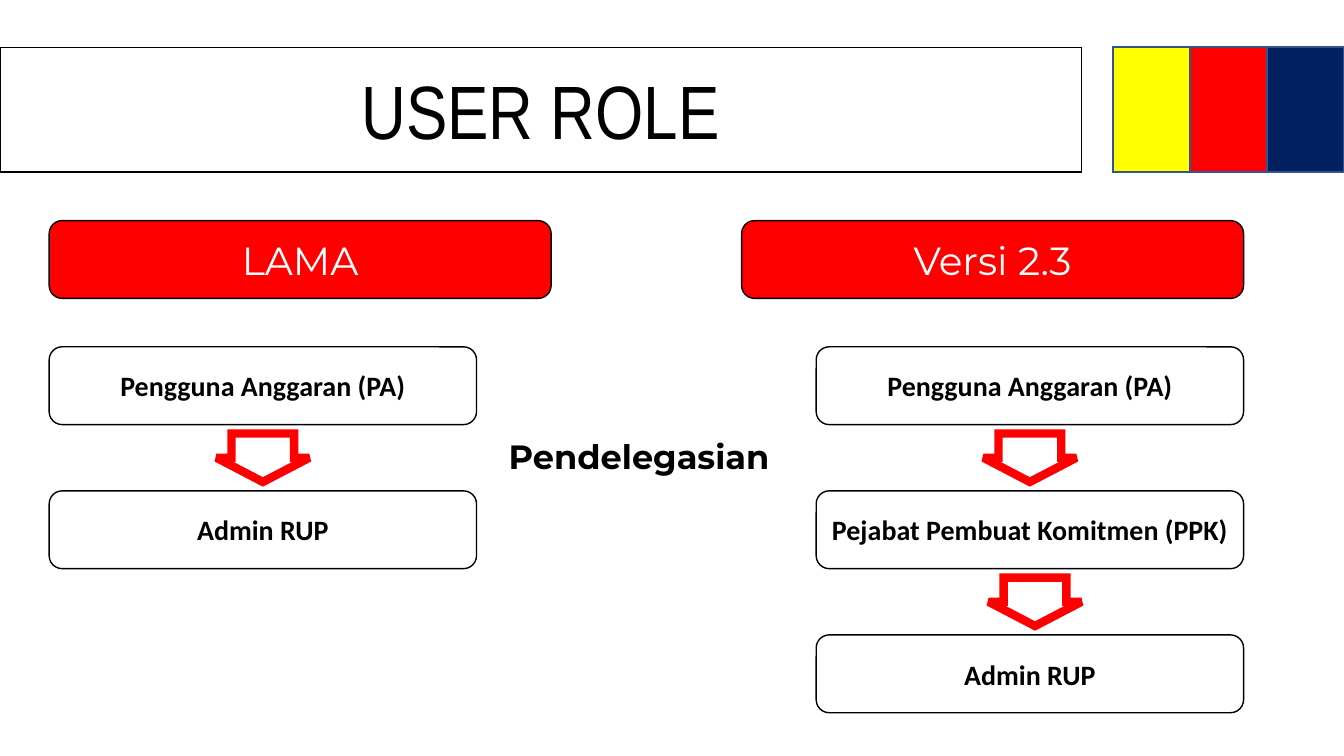
import pptx
import pptx.util
import pptx.dml.color
import pptx.enum.shapes
import pptx.enum.text
import pptx.oxml.ns
from lxml import etree

Cm, Pt = pptx.util.Cm, pptx.util.Pt
KIND = pptx.enum.shapes.MSO_SHAPE
ALIGN = pptx.enum.text.PP_ALIGN
MIDDLE = pptx.enum.text.MSO_ANCHOR.MIDDLE

# Content
TITLE = "USER ROLE"
LABEL = "Pendelegasian"
FLAG = ["FFFF00", "FF0000", "002060"]
# Each flow: heading, roles, sideways shift of each arrow, side of the slide
FLOWS = [
    ("LAMA", ["Pengguna Anggaran (PA)", "Admin RUP"], [0], "left"),
    ("Versi 2.3",
     ["Pengguna Anggaran (PA)", "Pejabat Pembuat Komitmen (PPK)", "Admin RUP"],
     [0, 0.13], "right"),
]

# Layout in centimetres
WIDE, HIGH = 33.87, 19.05
BAND_TOP, BAND_H = 1.19, 3.15
FLAG_W = 1.94
LEFT, RIGHT = 1.24, 31.34
HEAD_TOP, HEAD_W = 5.56, 12.65
ROLE_TOP, ROLE_W, STEP = 8.74, 10.77, 3.63
BOX_H = 1.96
ARROW_W, ARROW_H = 2.34, 1.22


def hue(code):
    return pptx.dml.color.RGBColor.from_string(code)


def place(item, x, y, w, h):
    item.left, item.top, item.width, item.height = Cm(x), Cm(y), Cm(w), Cm(h)


def paint(item, fill, line, weight=1):
    item.fill.solid()
    item.fill.fore_color.rgb = hue(fill)
    item.line.color.rgb = hue(line)
    item.line.width = Pt(weight)
    # Sharp corners on the outline
    miter = etree.SubElement(item.line._ln, pptx.oxml.ns.qn("a:miter"))
    miter.set("lim", "800000")


def write(item, text, size=20, font="Calibri", color="000000", bold=False,
          align=ALIGN.CENTER, anchor=MIDDLE):
    frame = item.text_frame
    frame.word_wrap = True
    frame.vertical_anchor = anchor
    para = frame.paragraphs[0]
    para.alignment = align
    run = para.add_run()
    run.text = text
    run.font.size = Pt(size)
    run.font.name = font
    run.font.bold = bold
    run.font.color.rgb = hue(color)


def draw(slide, kind, spot, fill, line, weight=1):
    item = slide.shapes.add_shape(kind, *map(Cm, spot))
    item.shadow.inherit = False
    paint(item, fill, line, weight)
    return item


def flow(slide, head, roles, shifts, side):
    def start(width):
        return LEFT if side == "left" else RIGHT - width

    # Heading
    box = draw(slide, KIND.ROUNDED_RECTANGLE,
               (start(HEAD_W), HEAD_TOP, HEAD_W, BOX_H), "FF0000", "000000")
    write(box, head, size=28, font="Montserrat", color="FFFFFF")

    # Roles
    x = start(ROLE_W)
    for row, role in enumerate(roles):
        box = draw(slide, KIND.ROUNDED_RECTANGLE,
                   (x, ROLE_TOP + row * STEP, ROLE_W, BOX_H),
                   "FFFFFF", "000000")
        write(box, role, bold=True)

    # Arrows centred in the gaps between roles
    gap = STEP - BOX_H
    for row, shift in enumerate(shifts):
        y = ROLE_TOP + row * STEP + BOX_H + (gap - ARROW_H) / 2
        arrow = draw(slide, KIND.DOWN_ARROW,
                     (x + (ROLE_W - ARROW_W) / 2 + shift, y, ARROW_W, ARROW_H),
                     "FFFFFF", "FF0000", 6)
        arrow.adjustments[0] = 0.676
        arrow.adjustments[1] = 0.5


def main():
    deck = pptx.Presentation()
    deck.slide_width, deck.slide_height = Cm(WIDE), Cm(HIGH)
    slide = deck.slides.add_slide(deck.slide_layouts[5])

    # Title band
    title = slide.shapes.title
    place(title, 0, BAND_TOP, 27.25, BAND_H)
    paint(title, "FFFFFF", "000000")
    write(title, TITLE, size=54, font="Arial Narrow")

    # Colour flag against the right edge
    for col, fill in enumerate(FLAG):
        x = WIDE - (len(FLAG) - col) * FLAG_W
        draw(slide, KIND.RECTANGLE, (x, BAND_TOP, FLAG_W, BAND_H),
             fill, "325491")

    # Flows
    for part in FLOWS:
        flow(slide, *part)

    # Label between the flows
    label = slide.shapes.add_textbox(Cm(12.57), Cm(10.85), Cm(7.44), Cm(1.27))
    write(label, LABEL, size=24, font="Montserrat", bold=True,
          align=ALIGN.LEFT, anchor=pptx.enum.text.MSO_ANCHOR.TOP)

    deck.save("out.pptx")


if __name__ == "__main__":
    main()
